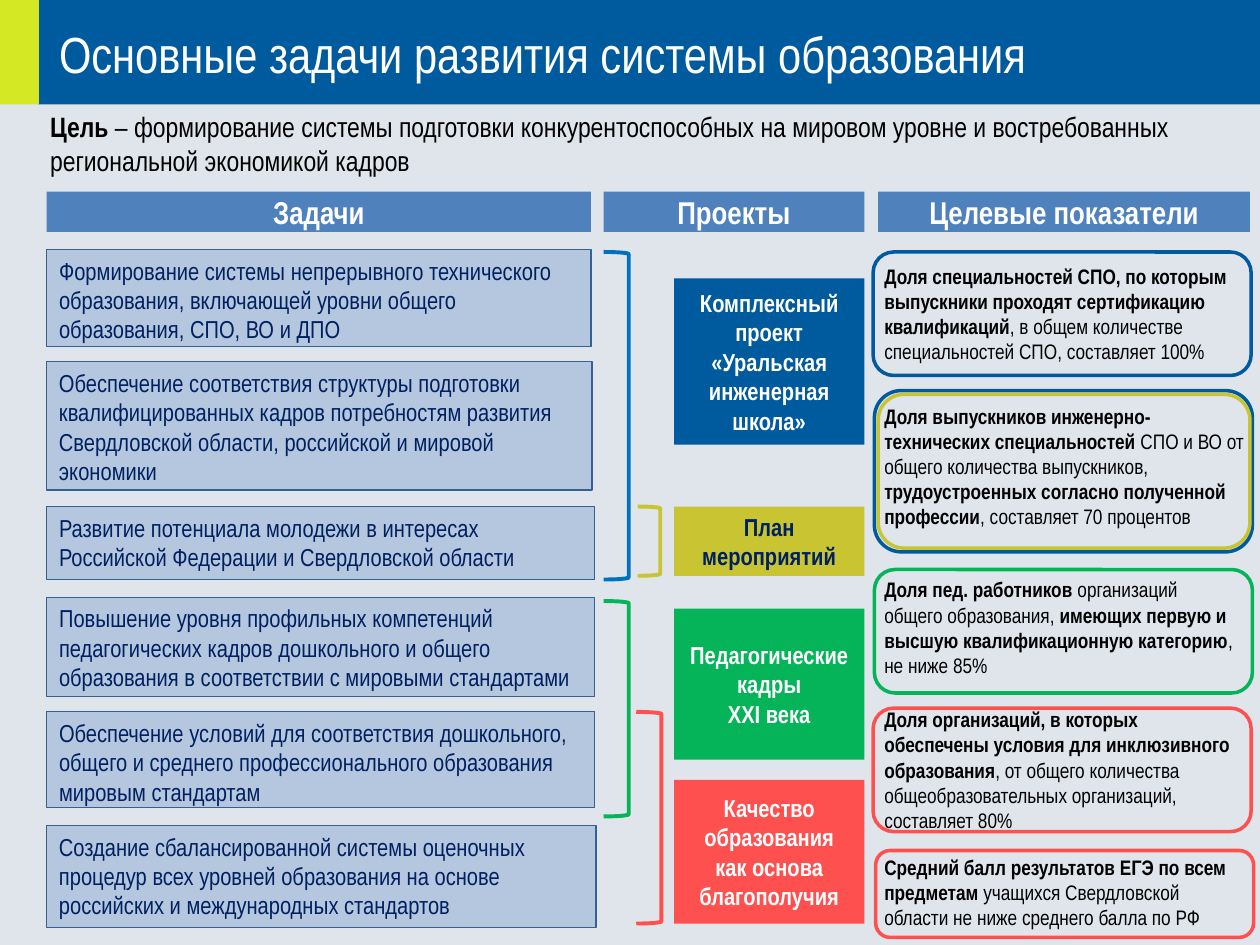
from pptx import Presentation
from pptx.dml.color import RGBColor
from pptx.enum.shapes import MSO_SHAPE
from pptx.enum.text import MSO_ANCHOR, PP_ALIGN
from pptx.util import Emu, Pt

RECT = MSO_SHAPE.RECTANGLE
ROUND = MSO_SHAPE.ROUNDED_RECTANGLE
HOOK = MSO_SHAPE.RIGHT_BRACKET
TOP, MID = MSO_ANCHOR.TOP, MSO_ANCHOR.MIDDLE
LEFT, MIDST = PP_ALIGN.LEFT, PP_ALIGN.CENTER
SCALE = 9144
BLUE, LIME, GOLD, GREEN, RED = "005A9E", "D5E824", "C8C432", "05B358", "FF5050"
HEAD, SKY, PALE, EDGE = "4F81BD", "0070C0", "B4C7DE", "376092"
NAVY, WHITE, BLACK, BACK = "002060", "FFFFFF", "000000", "E0E5EC"


def px(n):
    return Emu(n * SCALE)


def tint(code):
    return RGBColor.from_string(code)


class Page:
    """Holds the font and the current slide, and draws each kind of element."""

    def __init__(self, deck, font):
        self.font = font
        self.slide = deck.slides.add_slide(deck.slide_layouts[6])
        fill = self.slide.background.fill
        fill.solid()
        fill.fore_color.rgb = tint(BACK)

    def shape(self, kind, box, fill=None, line=None, width=2):
        item = self.slide.shapes.add_shape(kind, *map(px, box))
        item.shadow.inherit = False
        if fill:
            item.fill.solid()
            item.fill.fore_color.rgb = tint(fill)
        else:
            item.fill.background()
        if line:
            item.line.color.rgb = tint(line)
            item.line.width = Pt(width)
        else:
            item.line.fill.background()
        return item

    def label(self, item, paras, size, color, align=LEFT, anchor=TOP):
        frame = item.text_frame
        frame.word_wrap = True
        frame.vertical_anchor = anchor
        for i, runs in enumerate(paras):
            para = frame.paragraphs[0] if i == 0 else frame.add_paragraph()
            para.alignment = align
            for text, bold in runs:
                if text == "\n":
                    para.add_line_break()
                    continue
                run = para.add_run()
                run.text = text
                run.font.name = self.font
                run.font.size = Pt(size)
                run.font.bold = bold
                run.font.color.rgb = tint(color)

    def text(self, box, runs, size, color):
        item = self.slide.shapes.add_textbox(*map(px, box))
        self.label(item, [runs], size, color)

    def block(self, box, paras, size, fill, color=WHITE):
        item = self.shape(RECT, box, fill)
        self.label(item, paras, size, color, MIDST, MID)

    def task(self, box, text):
        item = self.shape(RECT, box, PALE, EDGE, 0.75)
        self.label(item, [[(text, False)]], 14, NAVY)


HEADS = [
    (37, 432, "Задачи"),
    (479, 207, "Проекты"),
    (697, 295, "Целевые показатели"),
]
TASKS = [
    (198, 432, 77, "Формирование системы непрерывного технического образования, "
     "включающей уровни общего образования, СПО, ВО и ДПО"),
    (287, 433, 102, "Обеспечение соответствия структуры подготовки квалифицированных кадров "
     "потребностям развития Свердловской области, российской и мировой экономики"),
    (402, 435, 58, "Развитие потенциала молодежи в интересах "
     "Российской Федерации и Свердловской области"),
    (474, 435, 79, "Повышение уровня профильных компетенций педагогических кадров дошкольного "
     "и общего образования в соответствии с мировыми стандартами"),
    (565, 435, 76, "Обеспечение условий для соответствия дошкольного, общего и среднего "
     "профессионального образования мировым стандартам"),
    (655, 436, 81, "Создание сбалансированной системы оценочных процедур всех уровней "
     "образования на основе российских и международных стандартов"),
]
PLANS = [
    (221, 132, BLUE, WHITE, [[("Комплексный проект «Уральская инженерная школа»", True)]]),
    (402, 55, GOLD, NAVY, [[("План мероприятий", True)]]),
    (483, 120, GREEN, WHITE, [[("Педагогические", True), ("\n", True), ("кадры", True)],
                              [("XXI века", True)]]),
    (619, 114, RED, WHITE, [[("Качество образования как основа благополучия", True)]]),
]
HOOKS = [
    (479, 200, 20, 260, SKY),
    (506, 402, 18, 55, GOLD),
    (479, 477, 20, 171, GREEN),
    (505, 565, 20, 168, RED),
]
GOALS = [
    (204, 295, 91, [
        ("Доля специальностей СПО, по которым выпускники проходят сертификацию квалификаций", True),
        (", в общем количестве специальностей СПО, составляет 100%", False)]),
    (315, 308, 111, [
        ("Доля выпускников инженерно-технических специальностей ", True),
        ("СПО и ВО от общего количества выпускников, ", False),
        ("трудоустроенных согласно полученной профессии", True),
        (", составляет 70 процентов", False)]),
    (453, 297, 91, [
        ("Доля пед. работников ", True),
        ("организаций общего образования, ", False),
        ("имеющих первую и высшую квалификационную категорию", True),
        (", не ниже 85%", False)]),
    (556, 303, 111, [
        ("Доля организаций, в которых обеспечены условия для инклюзивного образования", True),
        (", от общего количества общеобразовательных организаций, составляет 80%", False)]),
    (673, 297, 71, [
        ("Средний балл результатов ЕГЭ по всем предметам ", True),
        ("учащихся Свердловской области не ниже среднего балла по РФ", False)]),
]
FRAMES = [
    (693, 200, 300, 98, BLUE),
    (694, 310, 300, 128, BLUE),
    (697, 313, 295, 122, GOLD),
    (694, 452, 300, 98, GREEN),
    (693, 562, 300, 98, RED),
    (695, 675, 300, 69, RED),
]


def main():
    deck = Presentation()
    deck.slide_width, deck.slide_height = px(1000), px(750)
    page = Page(deck, "Arial Narrow")
    page.text((30, 82, 957, 66), [
        ("Цель", True),
        (" – формирование системы подготовки конкурентоспособных на мировом уровне "
         "и востребованных региональной экономикой кадров", False)], 16, BLACK)
    page.shape(RECT, (30, 0, 970, 83), BLUE)
    page.shape(RECT, (0, 0, 31, 83), LIME)
    page.text((37, 13, 951, 63),
              [("Основные задачи развития системы образования", False)], 29, WHITE)
    for x, w, name in HEADS:
        page.block((x, 152, w, 32), [[(name, True)]], 18, HEAD)
    for y, w, h, text in TASKS:
        page.task((37, y, w, h), text)
    for y, h, fill, color, paras in PLANS:
        page.block((535, y, 151, h), paras, 14, fill, color)
    for *box, color in HOOKS:
        page.shape(HOOK, box, line=color, width=2.25)
    for y, w, h, runs in GOALS:
        page.text((692, y, w, h), runs, 12, BLACK)
    for *box, color in FRAMES:
        page.shape(ROUND, box, line=color)
    deck.save("out.pptx")


if __name__ == "__main__":
    main()
